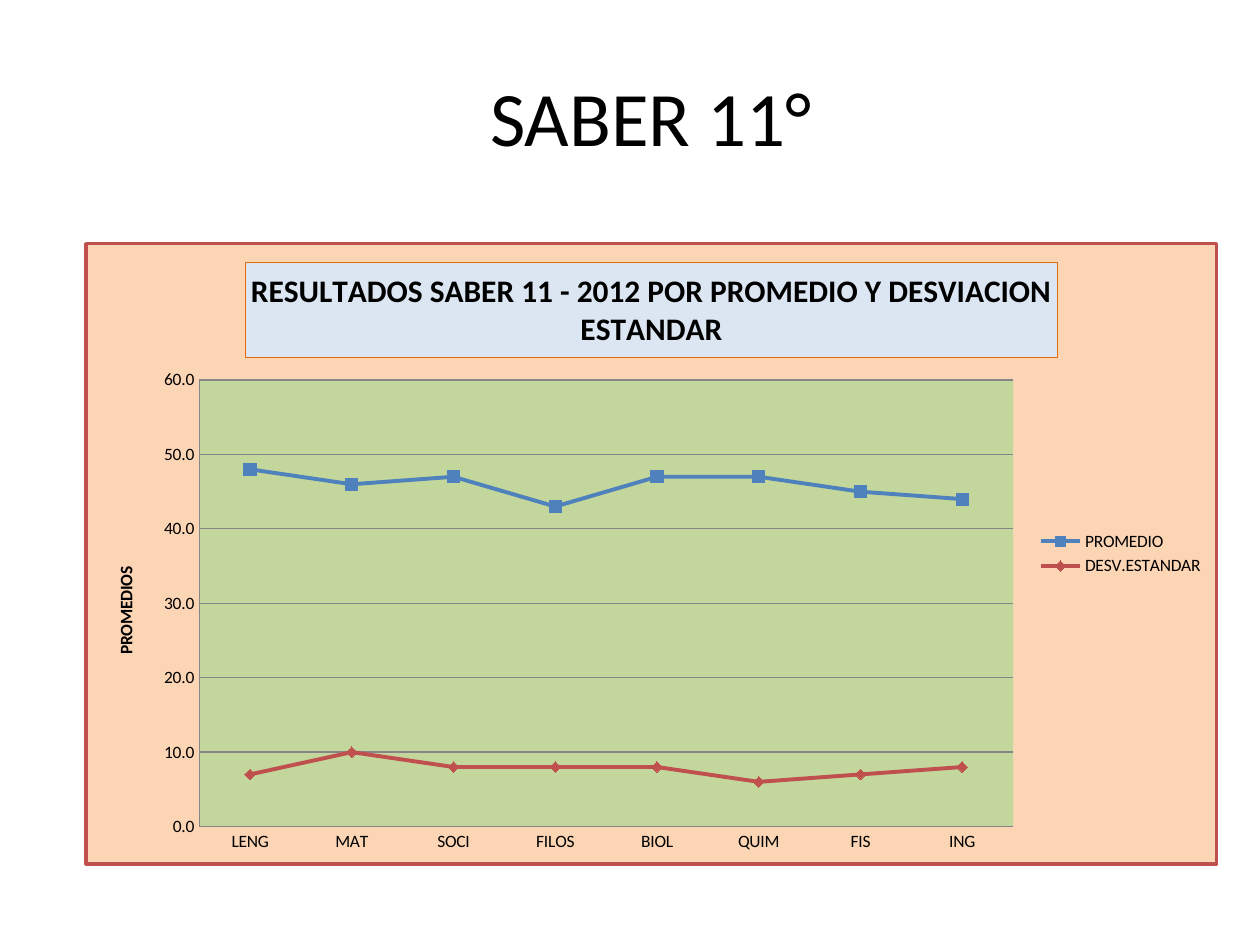
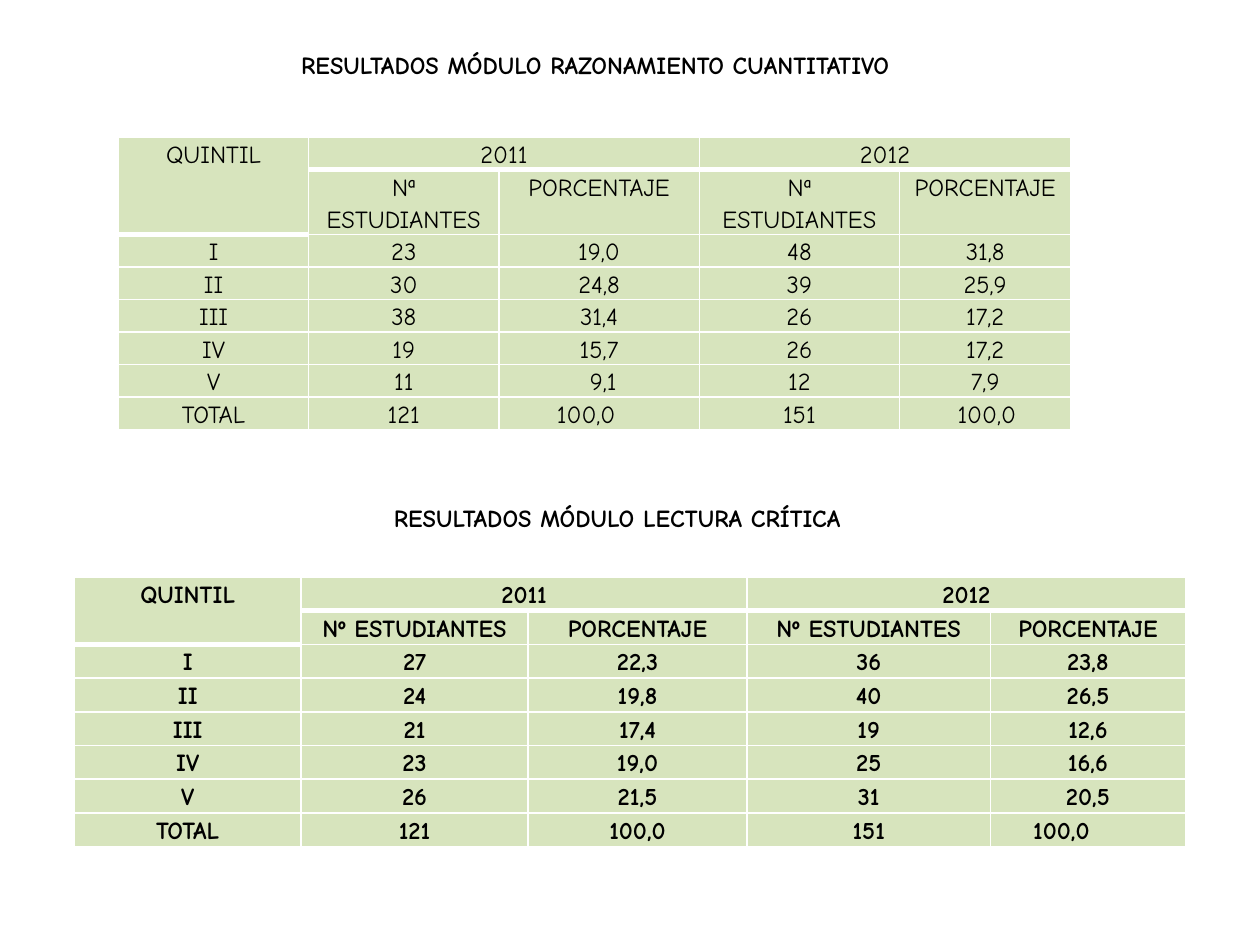
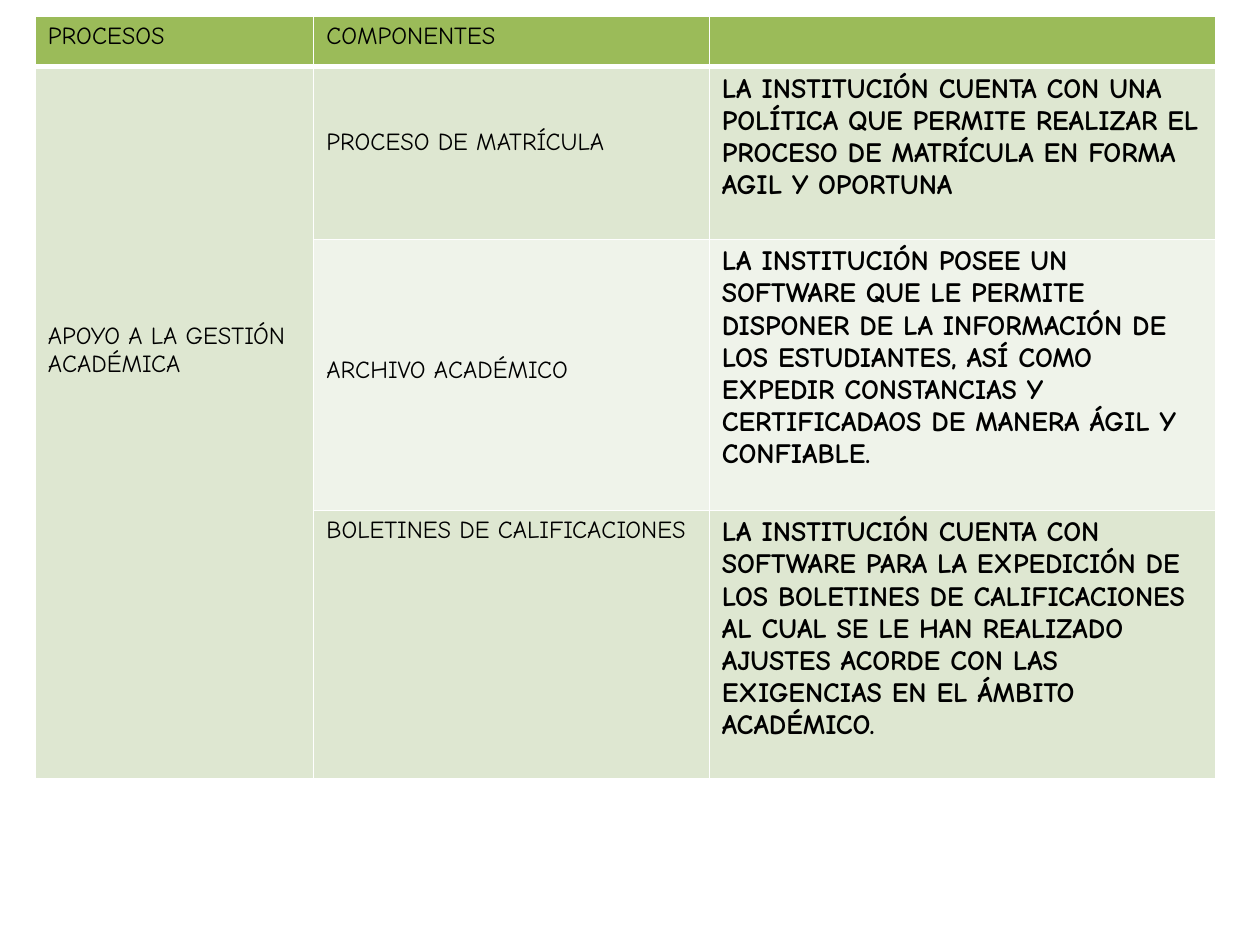
from lxml import etree
from pptx import Presentation
from pptx import util as u
from pptx.chart.data import CategoryChartData
from pptx.dml.color import RGBColor
from pptx.enum import chart as chart_enum
from pptx.enum import text
from pptx.oxml import parse_xml
from pptx.oxml.ns import nsdecls, qn

COLORS = {
    "text": "000000",
    "border": "FFFFFF",
    "pale_green": "D7E4BD",
    "header_green": "9BBB59",
    "band_dark": "DEE7D1",
    "band_light": "EFF3EA",
    "chart_back": "FCD5B5",
    "plot_back": "C3D69B",
    "title_back": "DCE6F2",
    "title_line": "E46C0A",
    "axis": "868686",
    "blue": "4F81BD",
    "red": "C0504D",
}
CHART_FONT = "Calibri"
BODY_FONT = "Comic Neue"
TITLE_ONLY, BLANK = 5, 6
LINE_HEIGHT = 0.22
CENTER = text.PP_ALIGN.CENTER
LEFT = text.PP_ALIGN.LEFT

SUBJECTS = ["LENG", "MAT", "SOCI", "FILOS", "BIOL", "QUIM", "FIS", "ING"]
SCORES = [
    ("PROMEDIO", [48, 46, 47, 43, 47, 47, 45, 44], "blue", chart_enum.XL_MARKER_STYLE.SQUARE, 7),
    ("DESV.ESTANDAR", [7, 10, 8, 8, 8, 6, 7, 8], "red", chart_enum.XL_MARKER_STYLE.DIAMOND, 6),
]

REASONING_ROWS = [
    ["I", "23", "19,0", "48", "31,8"],
    ["II", "30", "24,8", "39", "25,9"],
    ["III", "38", "31,4", "26", "17,2"],
    ["IV", "19", "15,7", "26", "17,2"],
    ["V", "11", " 9,1", "12", "7,9"],
    ["TOTAL", "121", "100,0", "151", "100,0"],
]
READING_ROWS = [
    ["I", "27", "22,3", "36", "23,8"],
    ["II", "24", "19,8", "40", "26,5"],
    ["III", "21", "17,4", "19", "12,6"],
    ["IV", "23", "19,0", "25", "16,6"],
    ["V", "26", "21,5", "31", "20,5"],
    ["TOTAL", "121", "100,0", "151", "100,0"],
]
COMPONENTS = [
    ("PROCESO DE MATRÍCULA", 2, "band_dark",
     "LA INSTITUCIÓN CUENTA CON UNA POLÍTICA QUE PERMITE REALIZAR EL PROCESO DE "
     "MATRÍCULA EN FORMA AGIL Y OPORTUNA"),
    ("ARCHIVO ACADÉMICO", 4, "band_light",
     "LA INSTITUCIÓN POSEE UN SOFTWARE QUE LE PERMITE DISPONER DE LA INFORMACIÓN DE "
     "LOS ESTUDIANTES, ASÍ COMO EXPEDIR CONSTANCIAS Y CERTIFICADAOS DE MANERA ÁGIL Y "
     "CONFIABLE."),
    ("BOLETINES DE CALIFICACIONES", 0, "band_dark",
     "LA INSTITUCIÓN CUENTA CON SOFTWARE PARA LA EXPEDICIÓN DE LOS BOLETINES DE "
     "CALIFICACIONES AL CUAL SE LE HAN REALIZADO AJUSTES ACORDE CON LAS EXIGENCIAS EN "
     "EL ÁMBITO ACADÉMICO."),
]


def rgb(name):
    return RGBColor.from_string(COLORS[name])


def style_font(font, name, size, bold=False):
    font.name = name
    font.size = u.Pt(size)
    font.bold = bold
    font.color.rgb = rgb("text")


def write(frame, content, name, size, bold=False, align=LEFT):
    paragraph = frame.paragraphs[0]
    paragraph.alignment = align
    run = paragraph.add_run()
    run.text = content
    style_font(run.font, name, size, bold)
    return paragraph


def place(shape, left, top, width, height):
    shape.left, shape.top = u.Inches(left), u.Inches(top)
    shape.width, shape.height = u.Inches(width), u.Inches(height)


def set_heading(shape, content, box, name=BODY_FONT, size=14, bold=True, bottom=0.35):
    place(shape, *box)
    frame = shape.text_frame
    frame.word_wrap = True
    frame.auto_size = text.MSO_AUTO_SIZE.NONE
    frame.vertical_anchor = text.MSO_ANCHOR.MIDDLE
    frame.margin_bottom = u.Inches(bottom)
    write(frame, content, name, size, bold, CENTER)


def set_borders(cell, bottom_width):
    properties = cell._tc.get_or_add_tcPr()
    for side, width in (("L", 1), ("R", 1), ("T", 1), ("B", bottom_width)):
        line = etree.SubElement(properties, qn(f"a:ln{side}"), w=str(u.Pt(width)))
        fill = etree.SubElement(line, qn("a:solidFill"))
        etree.SubElement(fill, qn("a:srgbClr"), val=COLORS["border"])


def add_table(slide, left, top, columns, heights):
    frame = slide.shapes.add_table(
        len(heights), len(columns), u.Inches(left), u.Inches(top),
        u.Inches(sum(columns)), u.Inches(sum(heights)))
    table = frame.table
    table.first_row = table.horz_banding = False
    for column, width in zip(table.columns, columns):
        column.width = u.Inches(width)
    for row, height in zip(table.rows, heights):
        row.height = u.Inches(height)
    return table


def fill_cell(table, row, column, content, color, size=14, bold=False, align=LEFT):
    cell = table.cell(row, column)
    set_borders(cell, 3 if row == 0 else 1)
    cell.fill.solid()
    cell.fill.fore_color.rgb = rgb(color)
    paragraph = write(cell.text_frame, content, BODY_FONT, size, bold, align)
    return cell, paragraph


def add_quintile_table(slide, left, top, columns, height, weights, students, rows, bold, indents):
    unit = height / sum(weights)
    table = add_table(slide, left, top, columns, [unit * weight for weight in weights])
    headers = [["QUINTIL", "2011", "", "2012", ""],
               ["", students, "PORCENTAJE", students, "PORCENTAJE"]]
    for row, values in enumerate(headers + rows):
        for column, value in enumerate(values):
            indent = indents.get(column) if values[0] == "TOTAL" else None
            cell, paragraph = fill_cell(table, row, column, value, "pale_green", bold=bold,
                                        align=LEFT if indent else CENTER)
            cell.margin_left = u.Inches(indent or 0.07)
            cell.margin_right = u.Inches(0.07)
            cell.margin_top = cell.margin_bottom = 0
            paragraph.line_spacing = 1.15
    table.cell(0, 0).merge(table.cell(1, 0))
    table.cell(0, 1).merge(table.cell(0, 2))
    table.cell(0, 3).merge(table.cell(0, 4))


def solid_properties(fill, line=None, width=0):
    outline = "<a:noFill/>"
    if line:
        outline = f'<a:solidFill><a:srgbClr val="{COLORS[line]}"/></a:solidFill>'
    return parse_xml(
        f'<c:spPr {nsdecls("c", "a")}><a:solidFill><a:srgbClr val="{COLORS[fill]}"/>'
        f'</a:solidFill><a:ln w="{u.Pt(width)}">{outline}</a:ln></c:spPr>')


def style_areas(chart, x, y, width, height):
    chart_element = chart._chartSpace.find(qn("c:chart"))
    chart_element.addnext(solid_properties("chart_back", "red", 2))
    plot_area = chart_element.find(qn("c:plotArea"))
    for layout in plot_area.findall(qn("c:layout")):
        plot_area.remove(layout)
    layout = etree.Element(qn("c:layout"))
    manual = etree.SubElement(layout, qn("c:manualLayout"))
    settings = [("layoutTarget", "inner"), ("xMode", "edge"), ("yMode", "edge"),
                ("x", x), ("y", y), ("w", width), ("h", height)]
    for tag, value in settings:
        etree.SubElement(manual, qn(f"c:{tag}"), val=str(value))
    plot_area.insert(0, layout)
    plot_area.append(solid_properties("plot_back"))


def style_line(line, color, width):
    line.color.rgb = rgb(color)
    line.width = u.Pt(width)


def style_axes(chart):
    for axis in (chart.category_axis, chart.value_axis):
        axis.major_tick_mark = axis.minor_tick_mark = chart_enum.XL_TICK_MARK.NONE
        style_line(axis.format.line, "axis", 0.75)
    values = chart.value_axis
    values.minimum_scale, values.maximum_scale, values.major_unit = 0, 60, 10
    values.has_major_gridlines = True
    style_line(values.major_gridlines.format.line, "axis", 0.75)
    values.tick_labels.number_format = "0.0"
    values.tick_labels.number_format_is_linked = False
    values.has_title = True
    write(values.axis_title.text_frame, "PROMEDIOS", CHART_FONT, 10, True, CENTER)


def style_series(chart):
    chart.plots[0].vary_by_categories = False
    for series, (_, _, color, marker, size) in zip(chart.plots[0].series, SCORES):
        series.smooth = False
        style_line(series.format.line, color, 2.25)
        series.marker.style = marker
        series.marker.size = size
        series.marker.format.fill.solid()
        series.marker.format.fill.fore_color.rgb = rgb(color)
        style_line(series.marker.format.line, color, 0.75)


def add_score_chart(slide, left, top, width, height):
    data = CategoryChartData(number_format="0.0")
    data.categories = SUBJECTS
    for name, values, *_ in SCORES:
        data.add_series(name, values)
    chart = slide.shapes.add_chart(
        chart_enum.XL_CHART_TYPE.LINE_MARKERS, u.Inches(left), u.Inches(top),
        u.Inches(width), u.Inches(height), data).chart
    style_font(chart.font, CHART_FONT, 10)
    chart.has_title = True
    title = chart.chart_title
    write(title.text_frame, "RESULTADOS SABER 11 - 2012 POR PROMEDIO Y DESVIACION ESTANDAR",
          CHART_FONT, 18, True, CENTER)
    title.include_in_layout = False
    title.format.fill.solid()
    title.format.fill.fore_color.rgb = rgb("title_back")
    style_line(title.format.line, "title_line", 0.75)
    chart.has_legend = True
    chart.legend.position = chart_enum.XL_LEGEND_POSITION.RIGHT
    chart.legend.include_in_layout = False
    style_axes(chart)
    style_series(chart)
    style_areas(chart, 0.1, 0.22, 0.72, 0.72)


def add_process_table(slide):
    table = add_table(slide, 0.28, 0.13, [2.21, 3.14, 4.02], [0.4, 1.37, 2.15, 2.13])
    for column, header in enumerate(["PROCESOS", "COMPONENTES", ""]):
        fill_cell(table, 0, column, header, "header_green")
    for row, (component, lines_above, color, finding) in enumerate(COMPONENTS, 1):
        process = "APOYO A LA GESTIÓN ACADÉMICA" if row == 1 else ""
        process_cell, _ = fill_cell(table, row, 0, process, "band_dark")
        if process:
            process_cell.margin_top = u.Inches(0.05 + 9 * LINE_HEIGHT)
        component_cell, _ = fill_cell(table, row, 1, component, color)
        component_cell.margin_top = u.Inches(0.05 + lines_above * LINE_HEIGHT)
        fill_cell(table, row, 2, finding, color, size=16, bold=True)
    table.cell(1, 0).merge(table.cell(3, 0))


def add_scores_slide(presentation):
    slide = presentation.slides.add_slide(presentation.slide_layouts[TITLE_ONLY])
    set_heading(slide.shapes.title, "SABER 11°", (0.67, 0.29, 9, 1.25),
                CHART_FONT, 44, False, 0.05)
    add_score_chart(slide, 0.67, 1.92, 9, 4.95)


def add_modules_slide(presentation):
    slide = presentation.slides.add_slide(presentation.slide_layouts[TITLE_ONLY])
    set_heading(slide.shapes.title, "RESULTADOS MÓDULO RAZONAMIENTO CUANTITATIVO",
                (1.93, 0.22, 5.59, 0.88))
    add_quintile_table(slide, 0.94, 1.09, [1.51, 1.51, 1.59, 1.59, 1.36], 2.31,
                       [1, 2] + [1] * 6, "Nª ESTUDIANTES", REASONING_ROWS, False,
                       {2: 0.46, 4: 0.46})
    reading_box = (2.4, 3.94, 5, 0.64)
    heading = slide.shapes.add_textbox(*map(u.Inches, reading_box))
    set_heading(heading, "RESULTADOS MÓDULO LECTURA CRÍTICA", reading_box)
    add_quintile_table(slide, 0.59, 4.58, [1.8, 1.8, 1.74, 1.93, 1.55], 2.14,
                       [1] * 8, "Nº ESTUDIANTES", READING_ROWS, True, {4: 0.34})


def add_processes_slide(presentation):
    slide = presentation.slides.add_slide(presentation.slide_layouts[BLANK])
    add_process_table(slide)


def main():
    presentation = Presentation()
    presentation.slide_width = u.Inches(10)
    presentation.slide_height = u.Inches(7.5)
    add_scores_slide(presentation)
    add_modules_slide(presentation)
    add_processes_slide(presentation)
    presentation.save("out.pptx")


if __name__ == "__main__":
    main()
